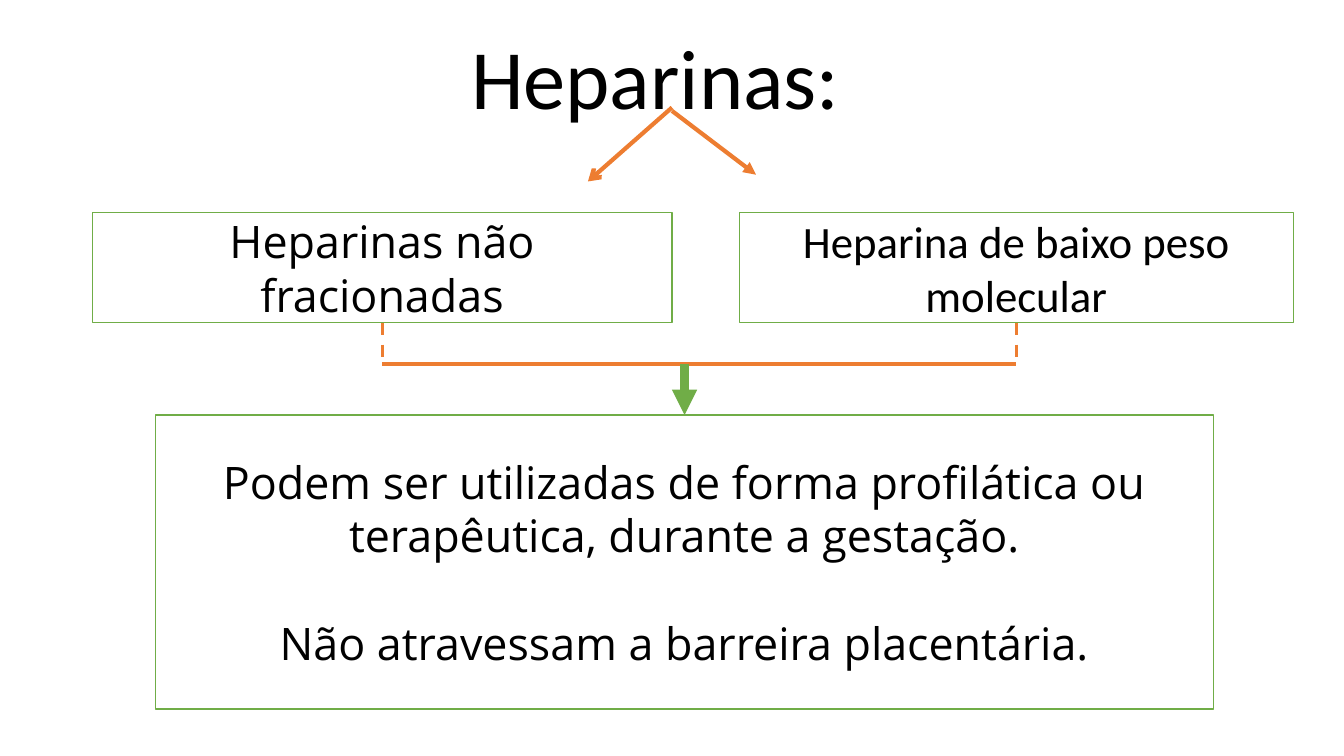
from dataclasses import dataclass

from lxml import etree
from pptx import Presentation
from pptx import util as u
from pptx.dml.color import RGBColor
from pptx.enum import dml, shapes, text
from pptx.oxml import ns

COLUMNS, ROWS = 160, 90


@dataclass(frozen=True)
class Theme:
    ink: RGBColor = RGBColor(0, 0, 0)
    paper: RGBColor = RGBColor(255, 255, 255)
    green: RGBColor = RGBColor(0x70, 0xAD, 0x47)
    orange: RGBColor = RGBColor(0xED, 0x7D, 0x31)
    title_font: str = "Calibri"
    body_font: str = "Open Sans"
    title_size: float = 60.3
    body_size: float = 32
    paragraph_gap: float = 38.5
    outline: float = 1
    dash: float = 2.25
    stroke: float = 3
    heavy: float = 6


@dataclass(frozen=True)
class Box:
    left: float
    top: float
    width: float
    height: float

    @property
    def right(self):
        return self.left + self.width

    @property
    def bottom(self):
        return self.top + self.height

    @property
    def center(self):
        return self.left + self.width / 2


THEME = Theme()
SLIDE_WIDTH, SLIDE_HEIGHT = u.Inches(13.33), u.Inches(7.5)


def across(columns):
    return round(SLIDE_WIDTH * columns / COLUMNS)


def down(rows):
    return round(SLIDE_HEIGHT * rows / ROWS)


def place(box):
    return across(box.left), down(box.top), across(box.width), down(box.height)


def format_paragraph(paragraph, font, size):
    paragraph.alignment = text.PP_ALIGN.CENTER
    paragraph.font.name = font
    paragraph.font.size = u.Pt(size)
    paragraph.font.color.rgb = THEME.ink


def add_title(page, box, wording):
    title = page.shapes.title
    title.left, title.top, title.width, title.height = place(box)
    frame = title.text_frame
    frame.text = wording
    frame.vertical_anchor = text.MSO_ANCHOR.MIDDLE
    frame.margin_top = frame.margin_bottom = 0
    paragraph = frame.paragraphs[0]
    paragraph.line_spacing = 0.9
    format_paragraph(paragraph, THEME.title_font, THEME.title_size)


def add_panel(page, box, paragraphs, font):
    panel = page.shapes.add_shape(shapes.MSO_SHAPE.RECTANGLE, *place(box))
    panel.shadow.inherit = False
    panel.fill.solid()
    panel.fill.fore_color.rgb = THEME.paper
    panel.line.color.rgb = THEME.green
    panel.line.width = u.Pt(THEME.outline)
    frame = panel.text_frame
    frame.word_wrap = True
    frame.vertical_anchor = text.MSO_ANCHOR.MIDDLE
    for index, wording in enumerate(paragraphs):
        paragraph = frame.paragraphs[0] if index == 0 else frame.add_paragraph()
        paragraph.text = wording
        format_paragraph(paragraph, font, THEME.body_size)
        if index:
            paragraph.space_before = u.Pt(THEME.paragraph_gap)
    return panel


def add_line(page, start, end, color, width, head=None, dashed=False):
    line = page.shapes.add_connector(
        shapes.MSO_CONNECTOR.STRAIGHT,
        across(start[0]), down(start[1]), across(end[0]), down(end[1]),
    )
    line.line.color.rgb = color
    line.line.width = u.Pt(width)
    if dashed:
        line.line.dash_style = dml.MSO_LINE.DASH
    properties = line._element.spPr
    if head:
        etree.SubElement(properties.find(ns.qn("a:ln")), ns.qn("a:tailEnd"), type=head)
    etree.SubElement(properties, ns.qn("a:effectLst"))
    return line


def add_fork(page, box):
    apex = (box.center, box.top)
    add_line(page, apex, (box.left, box.bottom), THEME.orange, THEME.stroke, "arrow")
    add_line(page, (box.center, box.top + 0.4), (box.right, box.bottom - 0.8),
             THEME.orange, THEME.stroke, "triangle")


def add_bracket(page, box, sources, target, arrow_column):
    rail = box.top + 0.45 * box.height
    for source, column in zip(sources, (box.left, box.right)):
        drop = add_line(page, (column, box.top), (column, rail),
                        THEME.orange, THEME.dash, dashed=True)
        drop.begin_connect(source, 2)
    add_line(page, (box.left, rail), (box.right, rail), THEME.orange, THEME.stroke)
    arrow = add_line(page, (arrow_column, rail), (arrow_column, box.bottom),
                     THEME.green, THEME.heavy, "triangle")
    arrow.end_connect(target, 0)


def build_heparins(page):
    unfractionated = Box(11, 25.3, 69, 13.1)
    low_weight = Box(88, 25.3, 66, 13.1)
    usage = Box(18.5, 49.4, 126, 35)
    add_title(page, Box(9, 4.3, 138, 11), "Heparinas:")
    sources = [
        add_panel(page, unfractionated, ["Heparinas não fracionadas"], THEME.body_font),
        add_panel(page, low_weight, ["Heparina de baixo peso molecular"], THEME.title_font),
    ]
    target = add_panel(page, usage, [
        "Podem ser utilizadas de forma profilática ou terapêutica, durante a gestação.",
        "Não atravessam a barreira placentária.",
    ], THEME.body_font)
    add_fork(page, Box(70, 12.8, 20, 8.8))
    span = Box(unfractionated.center, unfractionated.bottom,
               low_weight.center - unfractionated.center,
               usage.top - unfractionated.bottom)
    add_bracket(page, span, sources, target, usage.center)


def main():
    deck = Presentation()
    deck.slide_width, deck.slide_height = SLIDE_WIDTH, SLIDE_HEIGHT
    build_heparins(deck.slides.add_slide(deck.slide_layouts[5]))
    deck.save("out.pptx")


if __name__ == "__main__":
    main()
